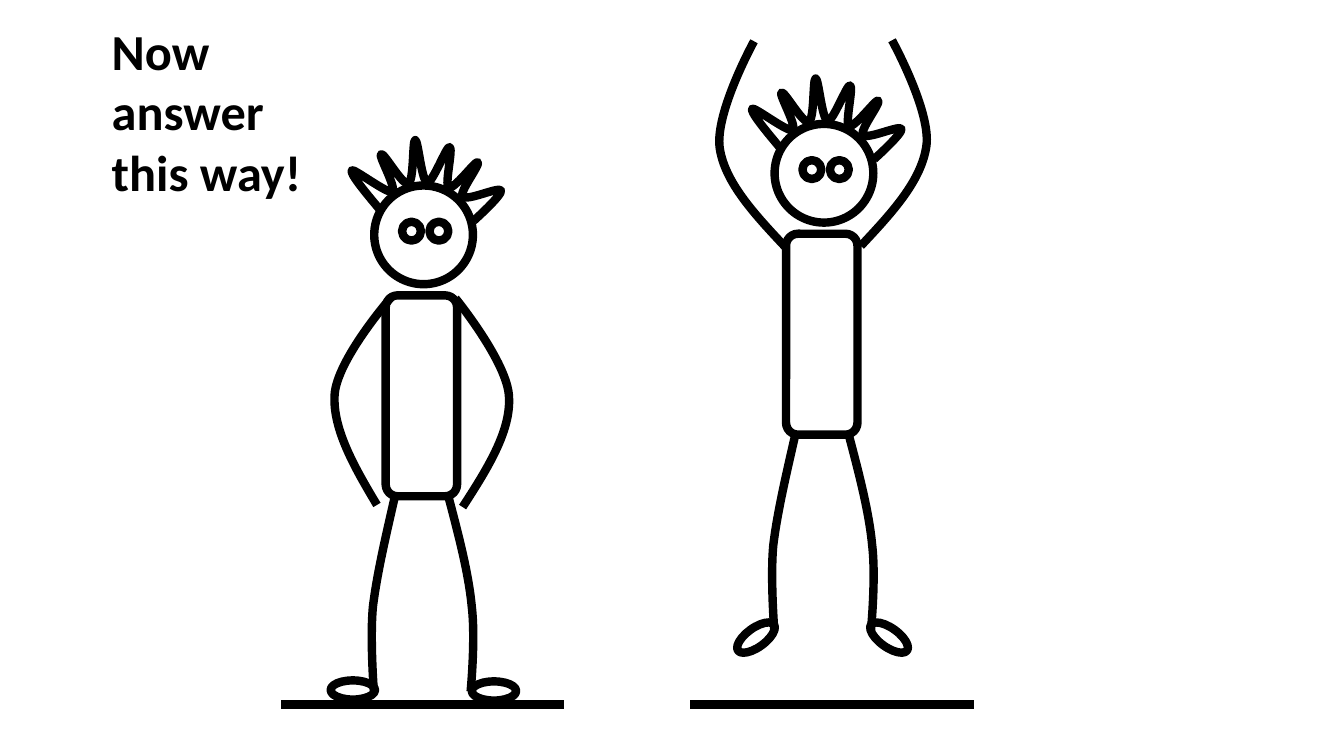
from lxml.etree import SubElement
from pptx import Presentation
from pptx.dml.color import RGBColor
from pptx.enum.shapes import MSO_CONNECTOR as Connector, MSO_SHAPE as Preset
from pptx.enum.text import MSO_AUTO_SIZE as AutoSize
from pptx.oxml.ns import qn
from pptx.util import Pt

INK = "000000"
STROKE = 6
CAPTION = "Now answer this way!"
CAPTION_BOX = (72.7, 10.8, 154.8, 138.2)
CAPTION_FONT = {"name": "Calibri", "size": Pt(36), "bold": True}

# Shared parts, placed as on the standing figure: left, top, width, height
TORSO = (275.5, 211, 51, 143.5)
HEAD = (267.3, 132.5, 70.5, 70.5)
EYES = [(287.2, 158.4, 13.5, 13.5), (306.8, 158.4, 13.5, 13.5)]
FOOT_SIZE = (31.7, 13.7)
GROUND_Y, GROUND_WIDTH = 503.3, 202.3

# Curves: a start point, then two control points and an end point per segment
LEGS = [
    [(282, 355), (275.8, 382.3), (269.3, 409.7), (266.4, 433.4),
     (264.2, 456.5), (267.1, 493.9), (267.1, 493.9)],
    [(320.4, 355), (327.6, 382.3), (334.8, 409.7), (337, 433.4),
     (339.8, 456.5), (336.2, 493.9), (336.2, 493.9)],
]
HAIR = [
    (270.7, 149),
    (259.9, 136.1), (249.8, 123.8), (251.3, 121.7),
    (252.7, 120.2), (277.2, 139), (280.1, 136.8),
    (283.7, 134.6), (270, 110.9), (272.2, 110.2),
    (274.3, 108.7), (287.3, 132.5), (291.6, 131),
    (295.9, 129.6), (294.5, 100.1), (296.6, 100.1),
    (298.8, 100.1), (301, 129.6), (305.3, 130.3),
    (308.9, 131), (319, 104.4), (321.1, 105.1),
    (324, 105.1), (317.5, 131.8), (320.4, 133.9),
    (324, 136.1), (339.8, 114.5), (341.3, 115.9),
    (343.4, 117.4), (327.6, 137.5), (330.5, 140.4),
    (333.4, 144), (356.4, 133.2), (357.8, 136.1),
    (359.3, 139), (338.4, 157.7), (338.4, 157.7),
]

# Per figure: shift of the shared parts, arms, feet (left, top, rotation), ground
JUMPING = {
    "shift": (286, -44),
    "arms": [
        [(614.9, 175.7), (636.5, 152.6), (658.1, 129.6), (661.7, 104.4),
         (665.3, 79.9), (637.2, 28.8), (637.2, 28.8)],
        [(560.9, 176.4), (539.3, 153.4), (517.7, 130.3), (514.1, 105.8),
         (510.5, 80.6), (538.6, 29.5), (538.6, 29.5)],
    ],
    "feet": [(524.2, 448.6, 324), (619.2, 448.6, 35.7)],
    "ground_left": 493.2,
}
STANDING = {
    "shift": (0, 0),
    "arms": [
        [(330.5, 362.2), (347.8, 335.5), (365, 308.2), (363.6, 283.7),
         (362.9, 259.2), (325.4, 213.1), (325.4, 213.1)],
        [(269.3, 360.7), (253.4, 334.1), (237.6, 306.7), (239, 282.2),
         (240.5, 257), (279.4, 212.4), (279.4, 212.4)],
    ],
    "feet": [(236.2, 486, 0), (337, 486.7, 0)],
    "ground_left": 200.9,
}


def color(hex_value):
    return RGBColor.from_string(hex_value)


def ink_line(part):
    part.line.color.rgb = color(INK)
    part.line.width = Pt(STROKE)


def outline(part):
    """Leave the part unfilled, with a thick ink outline and no shadow."""
    part.shadow.inherit = False
    part.fill.background()
    ink_line(part)


def add_preset(figure, preset, box, shift=(0, 0), rotation=0):
    left, top, width, height = box
    part = figure.shapes.add_shape(
        preset, Pt(left + shift[0]), Pt(top + shift[1]), Pt(width), Pt(height))
    part.rotation = rotation
    outline(part)


def add_curve(figure, points, shift=(0, 0)):
    """Join the end points, then turn each straight segment into a Bezier one."""
    points = [(Pt(x + shift[0]), Pt(y + shift[1])) for x, y in points]
    builder = figure.shapes.build_freeform(*points[0])
    builder.add_line_segments(points[3::3], close=False)
    curve = builder.convert_to_shape()
    left, top = curve.left, curve.top
    segments = list(curve.element.iter(qn("a:lnTo")))
    for index, segment in enumerate(segments):
        segment.tag = qn("a:cubicBezTo")
        segment.clear()
        for x, y in points[3 * index + 1:3 * index + 4]:
            SubElement(segment, qn("a:pt"), x=str(x - left), y=str(y - top))
    outline(curve)


def add_ground(figure, left):
    ground = figure.shapes.add_connector(
        Connector.STRAIGHT, Pt(left), Pt(GROUND_Y),
        Pt(left + GROUND_WIDTH), Pt(GROUND_Y))
    ink_line(ground)
    SubElement(ground.element.spPr, qn("a:effectLst"))


def add_figure(slide, pose):
    figure = slide.shapes.add_group_shape()
    shift = pose["shift"]
    add_preset(figure, Preset.ROUNDED_RECTANGLE, TORSO, shift)
    for oval in [HEAD, *EYES]:
        add_preset(figure, Preset.OVAL, oval, shift)
    for curve in [*LEGS, HAIR]:
        add_curve(figure, curve, shift)
    for arm in pose["arms"]:
        add_curve(figure, arm)
    for left, top, rotation in pose["feet"]:
        add_preset(figure, Preset.OVAL, (left, top, *FOOT_SIZE), rotation=rotation)
    add_ground(figure, pose["ground_left"])


def add_caption(slide):
    caption = slide.shapes.add_textbox(*map(Pt, CAPTION_BOX)).text_frame
    caption.word_wrap = True
    caption.auto_size = AutoSize.SHAPE_TO_FIT_TEXT
    caption.text = CAPTION
    font = caption.paragraphs[0].runs[0].font
    for attribute, value in CAPTION_FONT.items():
        setattr(font, attribute, value)
    font.color.rgb = color(INK)


def main():
    deck = Presentation()
    deck.slide_width, deck.slide_height = Pt(960), Pt(540)
    slide = deck.slides.add_slide(deck.slide_layouts[6])
    for pose in (JUMPING, STANDING):
        add_figure(slide, pose)
    add_caption(slide)
    deck.save("out.pptx")


if __name__ == "__main__":
    main()
